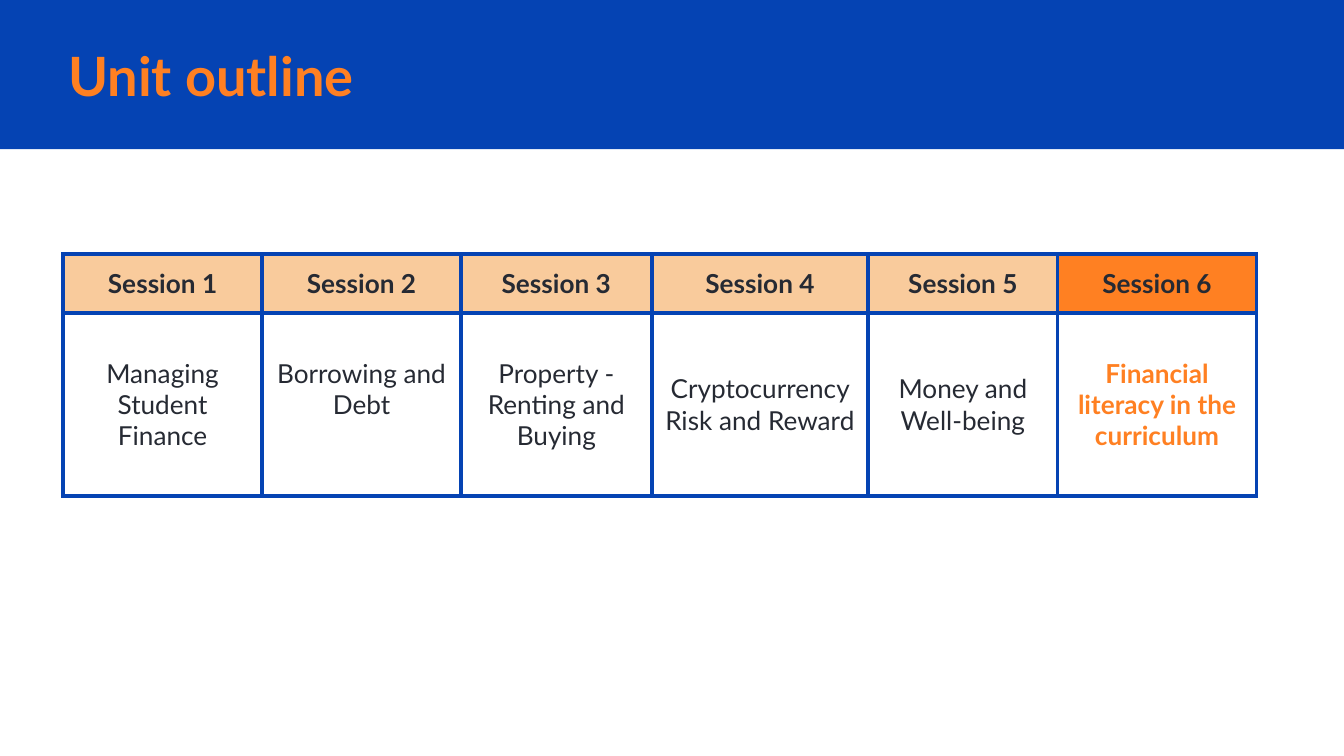
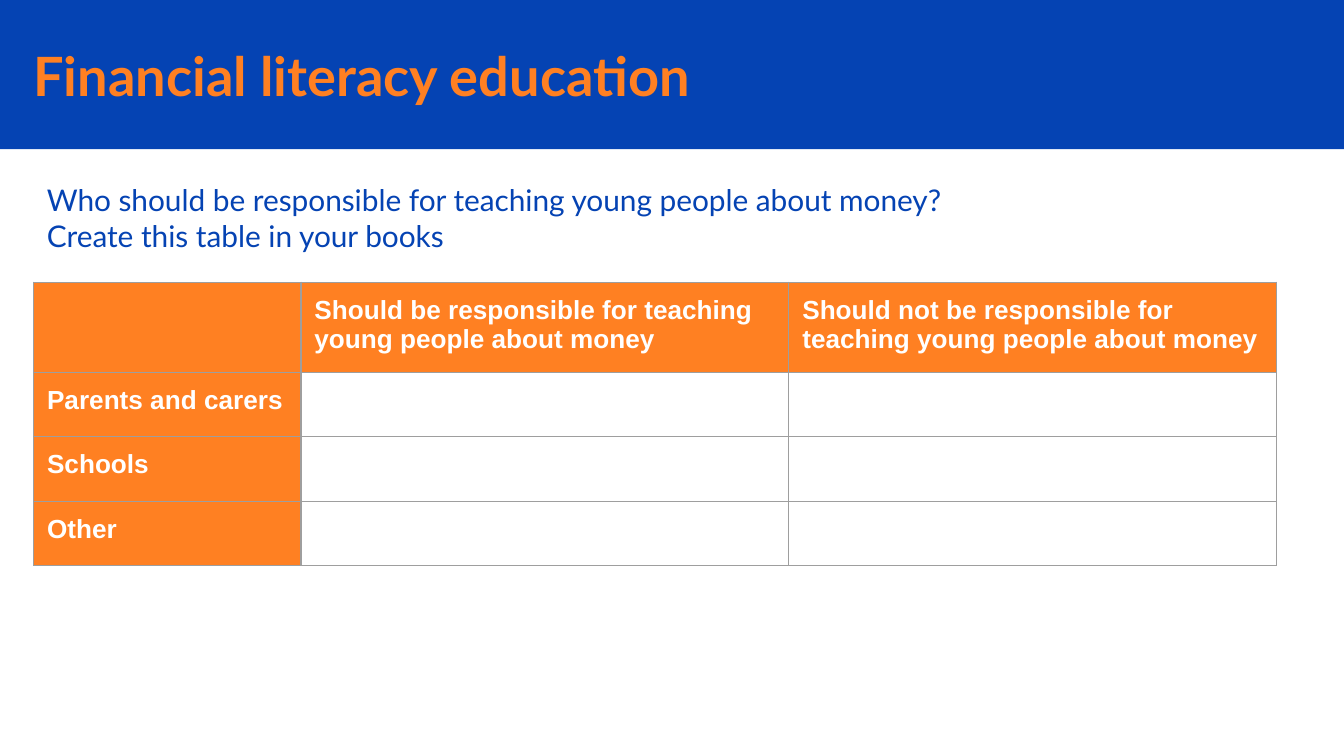
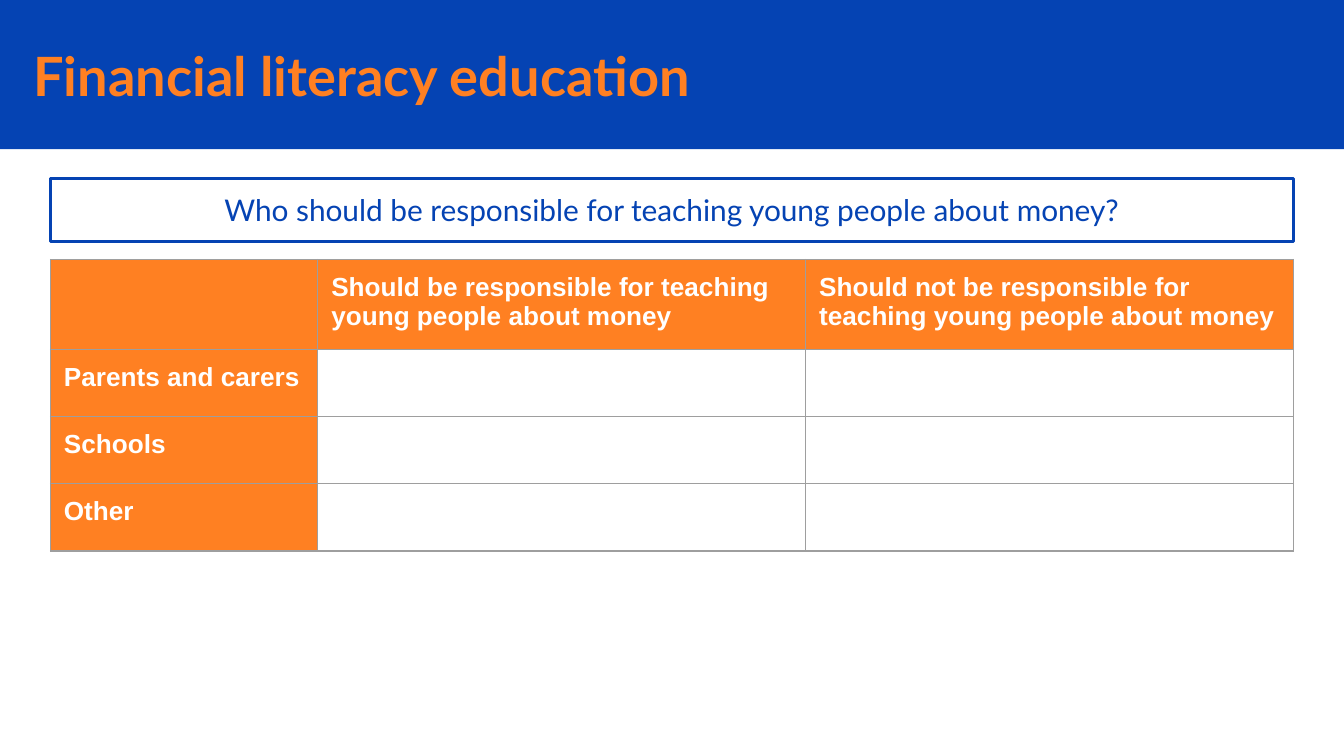
from lxml import etree
from pptx import Presentation
from pptx.dml.color import RGBColor
from pptx.enum.shapes import MSO_SHAPE
from pptx.enum.text import MSO_ANCHOR, PP_ALIGN
from pptx.oxml.ns import qn
from pptx.util import Inches, Pt

RECTANGLE = MSO_SHAPE.RECTANGLE
TOP, MIDDLE = MSO_ANCHOR.TOP, MSO_ANCHOR.MIDDLE
LEFT, CENTER = PP_ALIGN.LEFT, PP_ALIGN.CENTER

COLORS = {
    "blue": "0543B3",
    "orange": "FF8022",
    "peach": "F9CB9C",
    "ink": "262A33",
    "white": "FFFFFF",
    "grid": "9E9E9E",
}
HEADING_FONT, TABLE_FONT = "Lato", "Arial"
SLIDE_WIDTH = 10
SLIDE_HEIGHT = SLIDE_WIDTH * 9 / 16
INSET = 0.1

SESSIONS = [
    ("Session 1", "Managing Student Finance"),
    ("Session 2", "Borrowing and Debt"),
    ("Session 3", "Property - Renting and Buying"),
    ("Session 4", "Cryptocurrency Risk and Reward"),
    ("Session 5", "Money and Well-being"),
    ("Session 6", "Financial literacy in the curriculum"),
]
SESSION_WIDTHS = [1.48, 1.48, 1.42, 1.61, 1.41, 1.48]
SESSION_HEIGHTS = [0.44, 1.36]

EDUCATION_TITLE = "Financial literacy education"
QUESTION = "Who should be responsible for teaching young people about money?"
RESPONSIBILITY = [
    ["", "Should be responsible for teaching young people about money",
     "Should not be responsible for teaching young people about money"],
    ["Parents and carers", "", ""],
    ["Schools", "", ""],
    ["Other", "", ""],
]
RESPONSIBILITY_WIDTHS = [1.99, 3.63, 3.63]
CONTENT_WIDTH = sum(RESPONSIBILITY_WIDTHS)
HEADER_HEIGHT = 0.67


def rgb(name):
    return RGBColor.from_string(COLORS[name])


def write(holder, lines, size, color, font=HEADING_FONT, bold=False, align=LEFT):
    """Fill a text frame with one paragraph for each line."""
    holder.text = "\n".join(lines)
    for paragraph in holder.paragraphs:
        paragraph.alignment = align
        for run in paragraph.runs:
            run.font.size = Pt(size)
            run.font.name = font
            run.font.bold = bold
            run.font.color.rgb = rgb(color)


def set_insets(frame):
    frame.margin_left = frame.margin_right = Inches(INSET)
    frame.margin_top = frame.margin_bottom = Inches(INSET)


def add_text(slide, box, lines, size, color, bold=False, anchor=TOP):
    frame = slide.shapes.add_textbox(*map(Inches, box)).text_frame
    frame.word_wrap = True
    frame.vertical_anchor = anchor
    set_insets(frame)
    write(frame, lines, size, color, bold=bold)


def add_rectangle(slide, box):
    rectangle = slide.shapes.add_shape(RECTANGLE, *map(Inches, box))
    rectangle.shadow.inherit = False
    return rectangle


def add_banner(slide, title, left, width):
    """Blue band with the orange slide title."""
    band = add_rectangle(slide, (0, 0, SLIDE_WIDTH, 1.11))
    band.fill.solid()
    band.fill.fore_color.rgb = rgb("blue")
    band.line.fill.background()
    add_text(slide, (left, 0.28, width, 0.56), [title], 29, "orange",
             bold=True, anchor=MIDDLE)


def set_borders(cell, color, points):
    properties = cell._tc.get_or_add_tcPr()
    for position, side in enumerate(("lnL", "lnR", "lnT", "lnB")):
        border = etree.Element(qn(f"a:{side}"), w=str(Pt(points)))
        fill = etree.SubElement(border, qn("a:solidFill"))
        etree.SubElement(fill, qn("a:srgbClr"), val=COLORS[color])
        properties.insert(position, border)


def add_grid(slide, left, top, widths, heights):
    """Plain table with the given column widths and row heights."""
    box = map(Inches, (left, top, sum(widths), sum(heights)))
    table = slide.shapes.add_table(len(heights), len(widths), *box).table
    table.first_row = table.horz_banding = False
    for column, width in zip(table.columns, widths):
        column.width = Inches(width)
    for row, height in zip(table.rows, heights):
        row.height = Inches(height)
    return table


def style_cell(cell, fill, border, points):
    if fill:
        cell.fill.solid()
        cell.fill.fore_color.rgb = rgb(fill)
    else:
        cell.fill.background()
    set_borders(cell, border, points)


def add_session_table(slide, left, top):
    table = add_grid(slide, left, top, SESSION_WIDTHS, SESSION_HEIGHTS)
    for column, session in enumerate(SESSIONS):
        current = column == len(SESSIONS) - 1
        fills = ("orange" if current else "peach", "white")
        colors = ("ink", "orange" if current else "ink")
        for row, text in enumerate(session):
            cell = table.cell(row, column)
            style_cell(cell, fills[row], "blue", 2.25)
            set_insets(cell)
            cell.vertical_anchor = MIDDLE
            write(cell.text_frame, [text], 14, colors[row],
                  bold=row == 0 or current, align=CENTER)
    # The second topic sits half a line above the middle
    table.cell(1, 1).margin_bottom = Inches(INSET + 0.23)


def add_responsibility_table(slide, left, top, row_height):
    heights = [HEADER_HEIGHT] + [row_height] * (len(RESPONSIBILITY) - 1)
    table = add_grid(slide, left, top, RESPONSIBILITY_WIDTHS, heights)
    for row, texts in enumerate(RESPONSIBILITY):
        for column, text in enumerate(texts):
            cell = table.cell(row, column)
            heading = row == 0 or column == 0
            style_cell(cell, "orange" if heading else None, "grid", 0.75)
            if text:
                set_insets(cell)
                write(cell.text_frame, [text], 14, "white",
                      font=TABLE_FONT, bold=True)


def add_question_box(slide, box):
    question = add_rectangle(slide, box)
    question.fill.background()
    question.line.color.rgb = rgb("blue")
    question.line.width = Pt(1.5)
    frame = question.text_frame
    frame.word_wrap = True
    frame.vertical_anchor = TOP
    set_insets(frame)
    write(frame, [QUESTION], 16, "blue", align=CENTER)


def build_outline(slide):
    add_banner(slide, "Unit outline", 0.41, 8.46)
    add_session_table(slide, 0.47, 1.89)


def build_task(slide):
    add_banner(slide, EDUCATION_TITLE, 0.15, 8.85)
    add_responsibility_table(slide, 0.25, 2.1, 0.48)
    add_text(slide, (0.25, 1.25, CONTENT_WIDTH, 0.74),
             [QUESTION, "Create this table in your books"], 16, "blue")


def build_discussion(slide):
    left = (SLIDE_WIDTH - CONTENT_WIDTH) / 2
    add_banner(slide, EDUCATION_TITLE, 0.15, 8.85)
    add_responsibility_table(slide, left, 1.93, 0.5)
    add_question_box(slide, (left, 1.33, CONTENT_WIDTH, 0.47))


def main():
    deck = Presentation()
    deck.slide_width, deck.slide_height = Inches(SLIDE_WIDTH), Inches(SLIDE_HEIGHT)
    blank = deck.slide_layouts[6]
    for build in (build_outline, build_task, build_discussion):
        build(deck.slides.add_slide(blank))
    deck.save("out.pptx")


if __name__ == "__main__":
    main()
